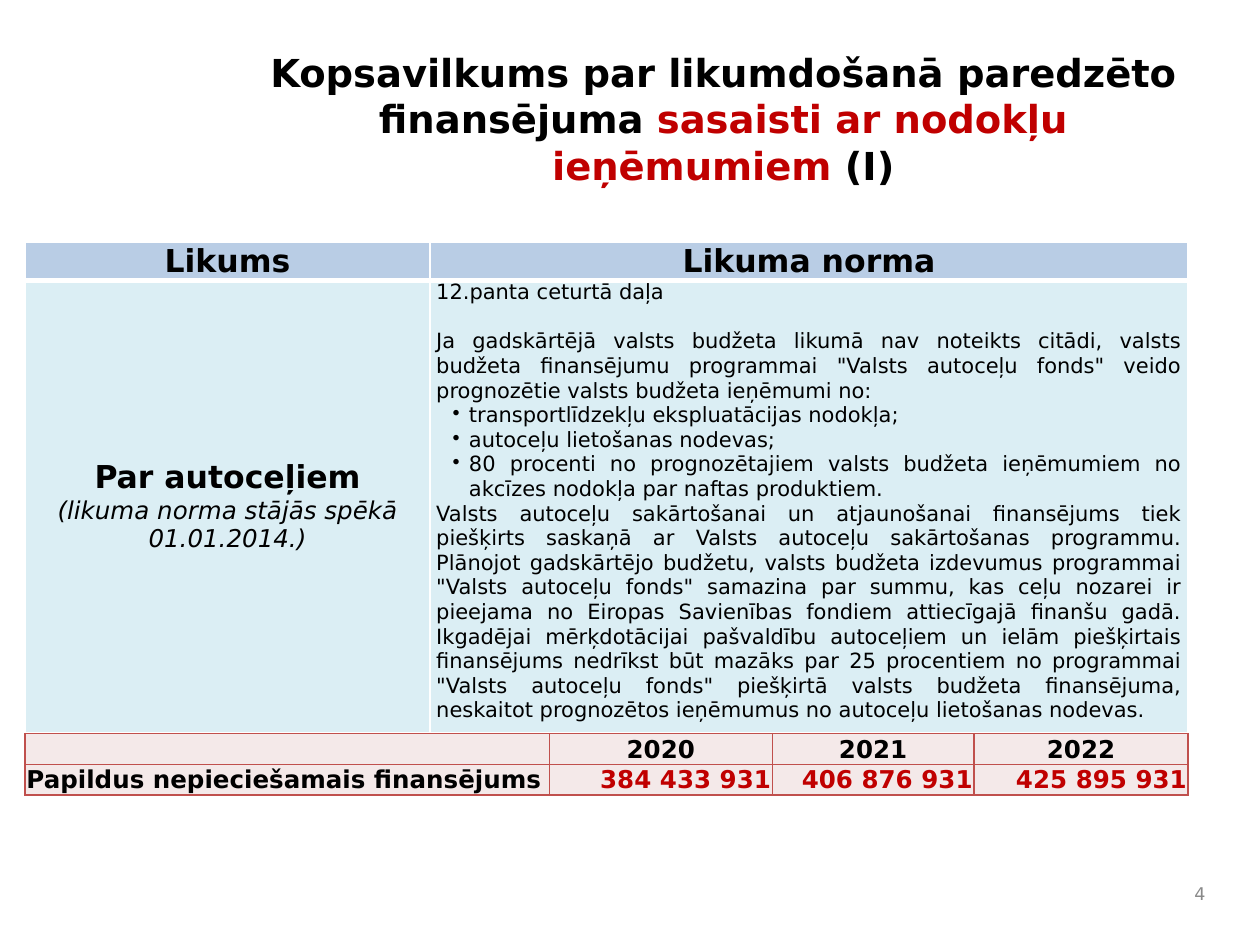
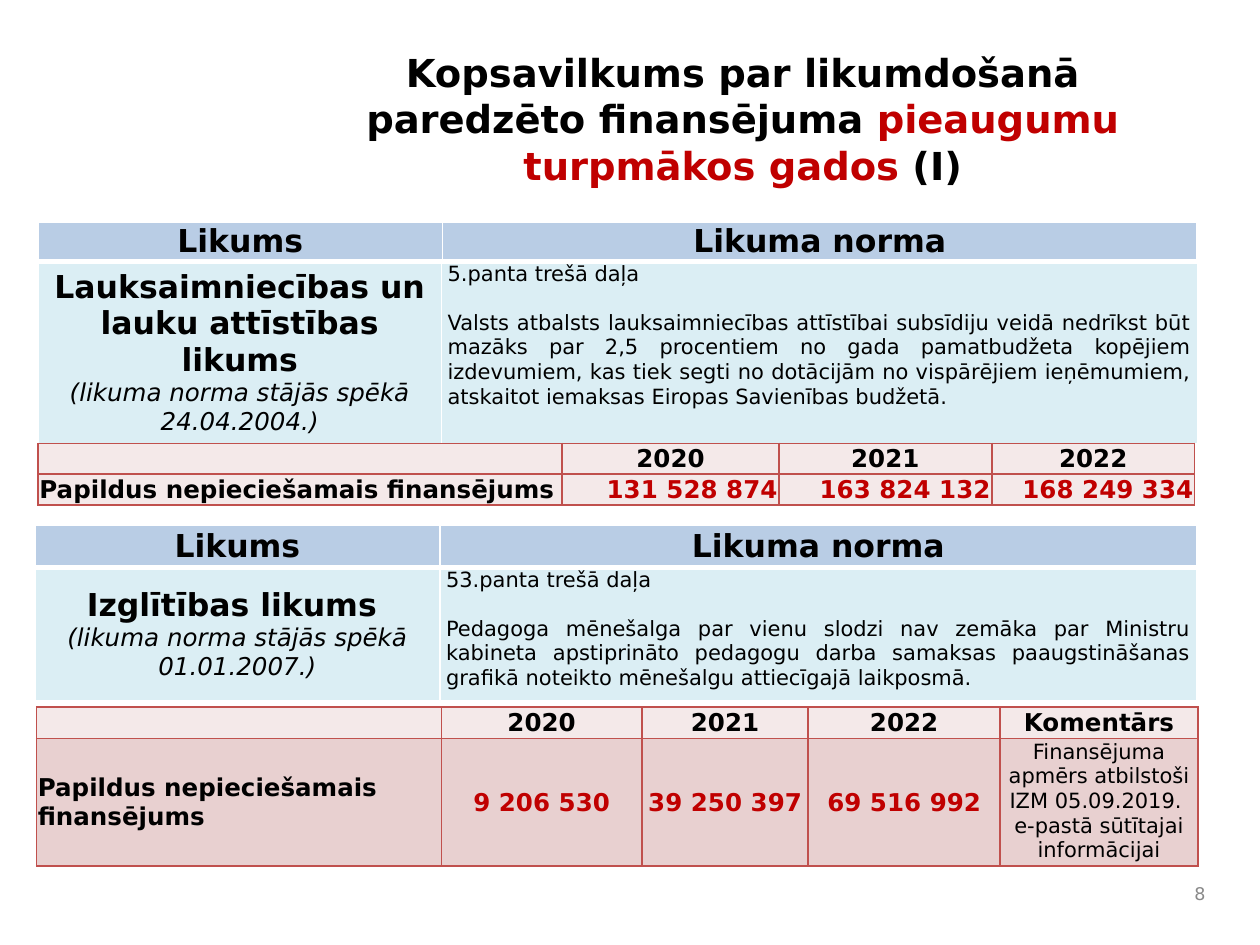
from lxml import etree
from pptx import Presentation
from pptx.dml.color import RGBColor
from pptx.enum import text
from pptx.oxml.ns import qn
from pptx.util import Pt

FONT = "DejaVu Sans"
COLORS = {
    "black": "000000",
    "accent": "C00000",
    "number": "898989",
    "white": "FFFFFF",
    "law_header": "B9CDE5",
    "law_body": "DBEEF4",
    "funding_line": "C0504D",
    "funding_light": "F4E9E9",
    "funding_dark": "E8D0D0",
}
ALIGN = text.PP_ALIGN
ANCHOR = text.MSO_ANCHOR
YEARS = ["2020", "2021", "2022"]
FUNDING_LABEL = "Papildus nepieciešamais finansējums"


def format_runs(paragraph, size, color="black", bold=False, italic=False):
    for run in paragraph.runs:
        run.font.name = FONT
        run.font.size = Pt(size)
        run.font.bold = bold
        run.font.italic = italic
        run.font.color.rgb = RGBColor.from_string(COLORS[color])


def add_title(slide, box, parts):
    title = slide.shapes.title
    title.left, title.top, title.width, title.height = map(Pt, box)
    frame = title.text_frame
    frame.word_wrap = True
    frame.auto_size = text.MSO_AUTO_SIZE.NONE
    frame.vertical_anchor = ANCHOR.TOP
    paragraph = frame.paragraphs[0]
    paragraph.alignment = ALIGN.CENTER
    for words in parts:
        paragraph.add_run().text = words
    format_runs(paragraph, 22, bold=True)
    paragraph.runs[1].font.color.rgb = RGBColor.from_string(COLORS["accent"])


def add_page_number(slide, number):
    shape = slide.shapes.add_textbox(Pt(663), Pt(498.5), Pt(33), Pt(24))
    frame = shape.text_frame
    frame.word_wrap = True
    frame.vertical_anchor = ANCHOR.MIDDLE
    frame.text = str(number)
    frame.paragraphs[0].alignment = ALIGN.RIGHT
    format_runs(frame.paragraphs[0], 10, "number")


def add_grid(slide, origin, columns, heights):
    left, top = origin
    frame = slide.shapes.add_table(
        len(heights), len(columns), Pt(left), Pt(top), Pt(sum(columns)), Pt(sum(heights))
    )
    table = frame.table
    table.first_row = False
    table.horz_banding = False
    for column, width in zip(table.columns, columns):
        column.width = Pt(width)
    for row, height in zip(table.rows, heights):
        row.height = Pt(height)
    return table


def style_cell(cell, fill, line, widths, margins, anchor=ANCHOR.MIDDLE):
    properties = cell._tc.get_or_add_tcPr()
    for side, width in zip("LRTB", widths):
        border = etree.SubElement(properties, qn(f"a:ln{side}"), w=str(Pt(width)))
        solid = etree.SubElement(border, qn("a:solidFill"))
        etree.SubElement(solid, qn("a:srgbClr"), val=COLORS[line])
    cell.fill.solid()
    cell.fill.fore_color.rgb = RGBColor.from_string(COLORS[fill])
    cell.margin_left, cell.margin_right, cell.margin_top, cell.margin_bottom = map(Pt, margins)
    cell.vertical_anchor = anchor


def write_cell(cell, lines, alignment, size, color="black", bold=False):
    cell.text_frame.text = "\n".join(lines)
    for paragraph in cell.text_frame.paragraphs:
        paragraph.alignment = alignment
        format_runs(paragraph, size, color, bold)
        if not paragraph.runs:
            etree.SubElement(paragraph._p, qn("a:endParaRPr"), sz=str(size * 100))


def style_law_cell(cell, fill, widths, anchor=ANCHOR.MIDDLE):
    style_cell(cell, fill, "white", widths, (3.6, 3.6, 0, 0), anchor)


def fill_law_header(cells):
    for cell, heading in zip(cells, ["Likums", "Likuma norma"]):
        style_law_cell(cell, "law_header", (1, 1, 1, 3))
        write_cell(cell, [heading], ALIGN.CENTER, 18, bold=True)


def add_bullet(paragraph):
    properties = paragraph._p.get_or_add_pPr()
    properties.set("marL", str(Pt(18.7)))
    properties.set("indent", str(Pt(-9.4)))
    etree.SubElement(properties, qn("a:buChar"), char="•")


def fill_law_body(cells, law, date, clause, norm, bullets=()):
    law_cell, norm_cell = cells
    style_law_cell(law_cell, "law_body", (1, 1, 3, 1))
    write_cell(law_cell, [law, f"(likuma norma stājās spēkā {date})"], ALIGN.CENTER, 18, bold=True)
    format_runs(law_cell.text_frame.paragraphs[1], 14, italic=True)

    style_law_cell(norm_cell, "law_body", (1, 1, 3, 1), ANCHOR.TOP)
    write_cell(norm_cell, [clause, *norm], ALIGN.JUSTIFY, 12)
    paragraphs = norm_cell.text_frame.paragraphs
    paragraphs[0].space_after = Pt(14)
    for index in bullets:
        add_bullet(paragraphs[index])


def add_law_table(slide, origin, columns, heights, **law):
    table = add_grid(slide, origin, columns, heights)
    fill_law_header(table.rows[0].cells)
    fill_law_body(table.rows[1].cells, **law)


def add_funding_table(slide, origin, columns, heights, amounts, comment=None):
    table = add_grid(slide, origin, columns, heights)
    headings = ["", *YEARS]
    values = [[FUNDING_LABEL], *[[amount] for amount in amounts]]
    if comment:
        headings.append("Komentārs")
        values.append(comment)
    value_fill = "funding_dark" if comment else "funding_light"
    amount_alignment = ALIGN.CENTER if comment else ALIGN.RIGHT
    for index, (heading, lines) in enumerate(zip(headings, values)):
        head, value = table.cell(0, index), table.cell(1, index)
        for cell, fill in ((head, "funding_light"), (value, value_fill)):
            style_cell(cell, fill, "funding_line", (1, 1, 1, 1), (0.72, 0.72, 0.72, 0))
        write_cell(head, [heading], ALIGN.CENTER, 14, bold=True)
        if index == 0:
            write_cell(value, lines, ALIGN.LEFT, 14, bold=True)
        elif index <= len(amounts):
            write_cell(value, lines, amount_alignment, 14, "accent", True)
        else:
            write_cell(value, lines, ALIGN.CENTER, 12)
            value.vertical_anchor = ANCHOR.TOP


def add_content_slide(presentation, title_box, title_parts, number):
    slide = presentation.slides.add_slide(presentation.slide_layouts[5])
    add_title(slide, title_box, title_parts)
    add_page_number(slide, number)
    return slide


def build_tax_link_slide(presentation):
    slide = add_content_slide(
        presentation,
        (130.3, 24.5, 566, 66),
        ["Kopsavilkums par likumdošanā paredzēto finansējuma ",
         "sasaisti ar nodokļu ieņēmumiem ", "(I)"],
        4,
    )
    add_law_table(
        slide, (14.4, 138.5), (231.3, 433.3), (21.5, 252),
        law="Par autoceļiem",
        date="01.01.2014.",
        clause="12.panta ceturtā daļa",
        norm=[
            "Ja gadskārtējā valsts budžeta likumā nav noteikts citādi, valsts budžeta "
            "finansējumu programmai \"Valsts autoceļu fonds\" veido prognozētie valsts "
            "budžeta ieņēmumi no:",
            "transportlīdzekļu ekspluatācijas nodokļa; ",
            "autoceļu lietošanas nodevas;",
            "80 procenti no prognozētajiem valsts budžeta ieņēmumiem no akcīzes nodokļa "
            "par naftas produktiem. ",
            "Valsts autoceļu sakārtošanai un atjaunošanai finansējums tiek piešķirts "
            "saskaņā ar Valsts autoceļu sakārtošanas programmu. Plānojot gadskārtējo "
            "budžetu, valsts budžeta izdevumus programmai \"Valsts autoceļu fonds\" "
            "samazina par summu, kas ceļu nozarei ir pieejama no Eiropas Savienības "
            "fondiem attiecīgajā finanšu gadā. Ikgadējai mērķdotācijai pašvaldību "
            "autoceļiem un ielām piešķirtais finansējums nedrīkst būt mazāks par 25 "
            "procentiem no programmai \"Valsts autoceļu fonds\" piešķirtā valsts budžeta "
            "finansējuma, neskaitot prognozētos ieņēmumus no autoceļu lietošanas nodevas.",
        ],
        bullets=(2, 3, 4),
    )
    add_funding_table(
        slide, (14.4, 419.2), (299.5, 127.5, 115.2, 122.4), (17.2, 17.2),
        ["384 433 931", "406 876 931", "425 895 931"],
    )


def build_growth_slide(presentation):
    slide = add_content_slide(
        presentation,
        (164.9, 24.5, 519, 66),
        ["Kopsavilkums par likumdošanā paredzēto finansējuma ",
         "pieaugumu turpmākos gados ", "(I)"],
        8,
    )
    header = add_grid(slide, (21.8, 127), (231, 431.3), (22.5,))
    fill_law_header(header.rows[0].cells)
    body = add_grid(slide, (21.8, 149.5), (230.4, 432), (104,))
    fill_law_body(
        body.rows[0].cells,
        law="Lauksaimniecības un lauku attīstības likums",
        date="24.04.2004.",
        clause="5.panta trešā daļa",
        norm=[
            "Valsts atbalsts lauksaimniecības attīstībai subsīdiju veidā nedrīkst būt "
            "mazāks par 2,5 procentiem no gada pamatbudžeta kopējiem izdevumiem, kas tiek "
            "segti no dotācijām no vispārējiem ieņēmumiem, atskaitot iemaksas Eiropas "
            "Savienības budžetā."
        ],
    )
    add_funding_table(
        slide, (21.8, 253.3), (299.5, 123.8, 121.7, 115.9), (17.7, 17.2),
        ["131 528 874", "163 824 132", "168 249 334"],
    )
    add_law_table(
        slide, (20, 300.4), (231.3, 432.7), (23.9, 76),
        law="Izglītības likums ",
        date="01.01.2007.",
        clause="53.panta trešā daļa ",
        norm=[
            "Pedagoga mēnešalga par vienu slodzi nav zemāka par Ministru kabineta "
            "apstiprināto pedagogu darba samaksas paaugstināšanas grafikā noteikto "
            "mēnešalgu attiecīgajā laikposmā."
        ],
    )
    add_funding_table(
        slide, (20.9, 404), (231.3, 114.7, 95, 109.7, 113), (18, 71),
        ["9 206 530", "39 250 397", "69 516 992"],
        comment=["Finansējuma apmērs atbilstoši IZM 05.09.2019. ",
                 "e-pastā sūtītajai informācijai"],
    )


def main():
    presentation = Presentation()
    presentation.slide_width, presentation.slide_height = Pt(720), Pt(540)
    build_tax_link_slide(presentation)
    build_growth_slide(presentation)
    presentation.save("out.pptx")


if __name__ == "__main__":
    main()
